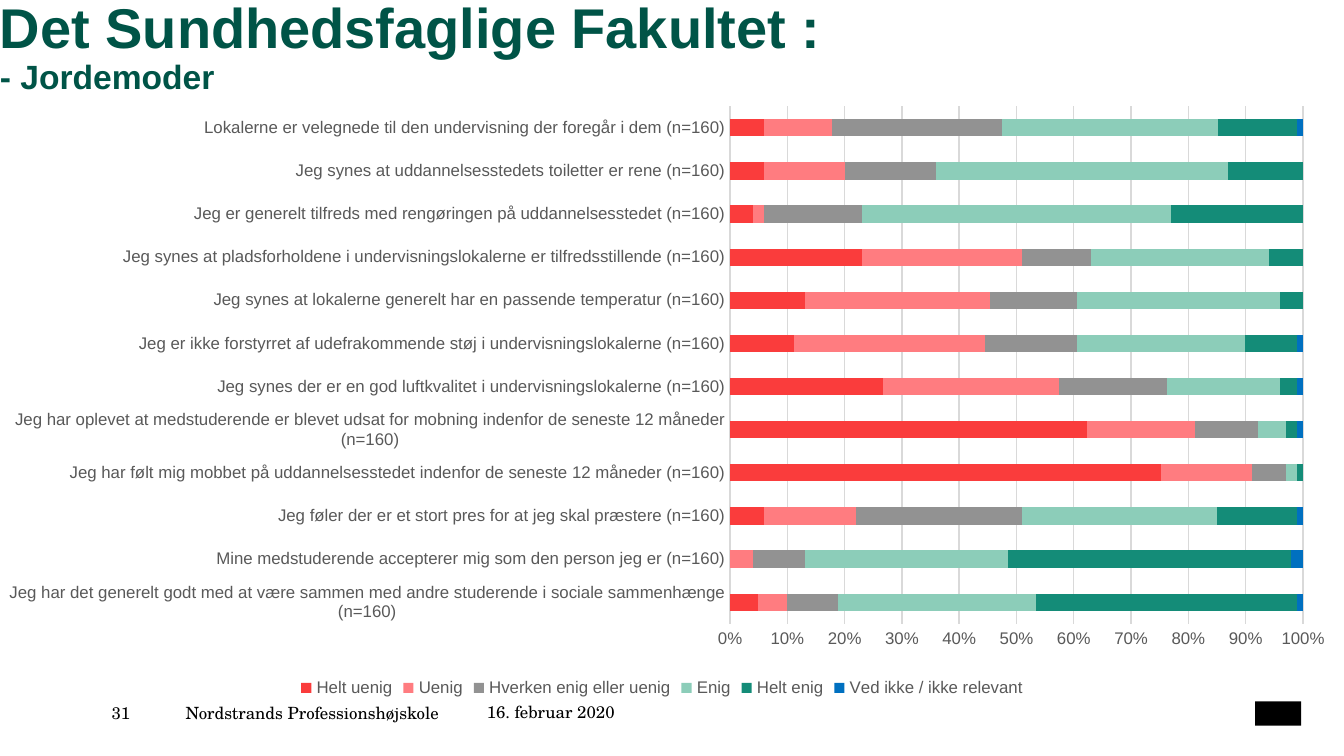
from pptx import Presentation
from pptx.chart.data import CategoryChartData
from pptx.dml.color import RGBColor
from pptx.enum.chart import XL_CHART_TYPE, XL_LEGEND_POSITION, XL_TICK_MARK
from pptx.enum.shapes import MSO_SHAPE
from pptx.oxml import parse_xml
from pptx.util import Cm, Pt

STACKED = XL_CHART_TYPE.BAR_STACKED_100
BOTTOM = XL_LEGEND_POSITION.BOTTOM
NO_TICK = XL_TICK_MARK.NONE
RECT = MSO_SHAPE.RECTANGLE
SERIF = "TeX Gyre Schola"
GREY = "595959"
PALE = "D9D9D9"
CHART_NS = "http://schemas.openxmlformats.org/drawingml/2006/chart"


def paint(color, value):
    color.rgb = RGBColor.from_string(value)


def write(text, left, top, width, height, sizes=(9,), font=SERIF,
          color="000000", bold=False, spacing=1.0):
    """Add a text box whose lines share one paragraph, each with its own size."""
    box = slide.shapes.add_textbox(Cm(left), Cm(top), Cm(width), Cm(height))
    frame = box.text_frame
    frame.word_wrap = True
    frame.margin_left = frame.margin_right = 0
    frame.margin_top = frame.margin_bottom = 0
    para = frame.paragraphs[0]
    para.line_spacing = spacing
    for i, (line, size) in enumerate(zip(text.split("\n"), sizes)):
        if i:
            para.add_line_break()
        run = para.add_run()
        run.text = line
        run.font.name = font
        run.font.size = Pt(size)
        run.font.bold = bold
        paint(run.font.color, color)


deck = Presentation()
deck.slide_width, deck.slide_height = Cm(25.4), Cm(14.29)
slide = deck.slides.add_slide(deck.slide_layouts[6])

# Footer
write("Nordstrands Professionshøjskole", 3.51, 13.28, 5.28, 0.38)
write("31", 2.11, 13.28, 1.17, 0.38)
write("16. februar 2020", 9.2, 13.26, 7.11, 0.38)
mark = slide.shapes.add_shape(RECT, Cm(23.72), Cm(13.26), Cm(0.87), Cm(0.46))
mark.shadow.inherit = False
mark.fill.solid()
paint(mark.fill.fore_color, "000000")
mark.line.fill.background()

# Title
write("Det Sundhedsfaglige Fakultet :\n- Jordemoder", 0, 0, 20.8, 2.74,
      sizes=(30, 18), font="Arial", color="005447", bold=True, spacing=0.9)

# Answers in percent, from the bottom bar up
cats = [
    "Jeg har det generelt godt med at være sammen med andre studerende i sociale sammenhænge",
    "Mine medstuderende accepterer mig som den person jeg er",
    "Jeg føler der er et stort pres for at jeg skal præstere",
    "Jeg har følt mig mobbet på uddannelsesstedet indenfor de seneste 12 måneder",
    "Jeg har oplevet at medstuderende er blevet udsat for mobning indenfor de seneste 12 måneder",
    "Jeg synes der er en god luftkvalitet i undervisningslokalerne",
    "Jeg er ikke forstyrret af udefrakommende støj i undervisningslokalerne",
    "Jeg synes at lokalerne generelt har en passende temperatur",
    "Jeg synes at pladsforholdene i undervisningslokalerne er tilfredsstillende",
    "Jeg er generelt tilfreds med rengøringen på uddannelsesstedet",
    "Jeg synes at uddannelsesstedets toiletter er rene",
    "Lokalerne er velegnede til den undervisning der foregår i dem",
]
answers = [
    ("Helt uenig", "FA3C3C", [5, None, 6, 76, 63, 27, 11, 13, 23, 4, 6, 6]),
    ("Uenig", "FF7C80", [5, 4, 16, 16, 19, 31, 33, 32, 28, 2, 14, 12]),
    ("Hverken enig eller uenig", "929292",
     [9, 9, 29, 6, 11, 19, 16, 15, 12, 17, 16, 30]),
    ("Enig", "8CCDB9", [35, 35, 34, 2, 5, 20, 29, 35, 31, 54, 51, 38]),
    ("Helt enig", "148C78", [46, 49, 14, 1, 2, 3, 9, 4, 6, 23, 13, 14]),
    ("Ved ikke / ikke relevant", "0070C0",
     [1, 2, 1, None, 1, 1, 1, None, None, None, None, 1]),
]
data = CategoryChartData()
data.categories = [f"{cat} (n=160)" for cat in cats]
for name, _, vals in answers:
    data.add_series(name, vals)

chart = slide.shapes.add_chart(
    STACKED, Cm(-0.38), Cm(1.78), Cm(25.78), Cm(11.51), data).chart
chart.has_title = False
chart.font.name = "Arial"
chart.font.size = Pt(10)
paint(chart.font.color, "000000")

plot = chart.plots[0]
plot.vary_by_categories = False
plot.gap_width = 150
plot.overlap = 100
for series, (_, color, _) in zip(plot.series, answers):
    series.format.fill.solid()
    paint(series.format.fill.fore_color, color)

chart.has_legend = True
legend = chart.legend
legend.position = BOTTOM
legend.include_in_layout = False

cat_axis, val_axis = chart.category_axis, chart.value_axis
for axis in (cat_axis, val_axis):
    axis.major_tick_mark = axis.minor_tick_mark = NO_TICK
for part in (cat_axis.tick_labels, val_axis.tick_labels, legend):
    part.font.name = "Arial"
    part.font.size = Pt(9)
    paint(part.font.color, GREY)

val_axis.has_major_gridlines = True
val_axis.major_unit = 0.1
val_axis.tick_labels.number_format = "0%"
val_axis.tick_labels.number_format_is_linked = False
val_axis.format.line.fill.background()
cat_axis.has_major_gridlines = False
for line in (cat_axis.format.line, val_axis.major_gridlines.format.line):
    line.width = Pt(0.75)
    paint(line.color, PALE)

# Fixed plot area, as fractions of the chart
area = chart.element.find(f".//{{{CHART_NS}}}plotArea")
for old in area.findall(f"{{{CHART_NS}}}layout"):
    area.remove(old)
area.insert(0, parse_xml(
    f'<c:layout xmlns:c="{CHART_NS}"><c:manualLayout>'
    '<c:layoutTarget val="inner"/>'
    '<c:xMode val="edge"/><c:yMode val="edge"/>'
    '<c:x val="0.55"/><c:y val="0.02"/>'
    '<c:w val="0.42"/><c:h val="0.85"/>'
    '</c:manualLayout></c:layout>'))

deck.save("out.pptx")
